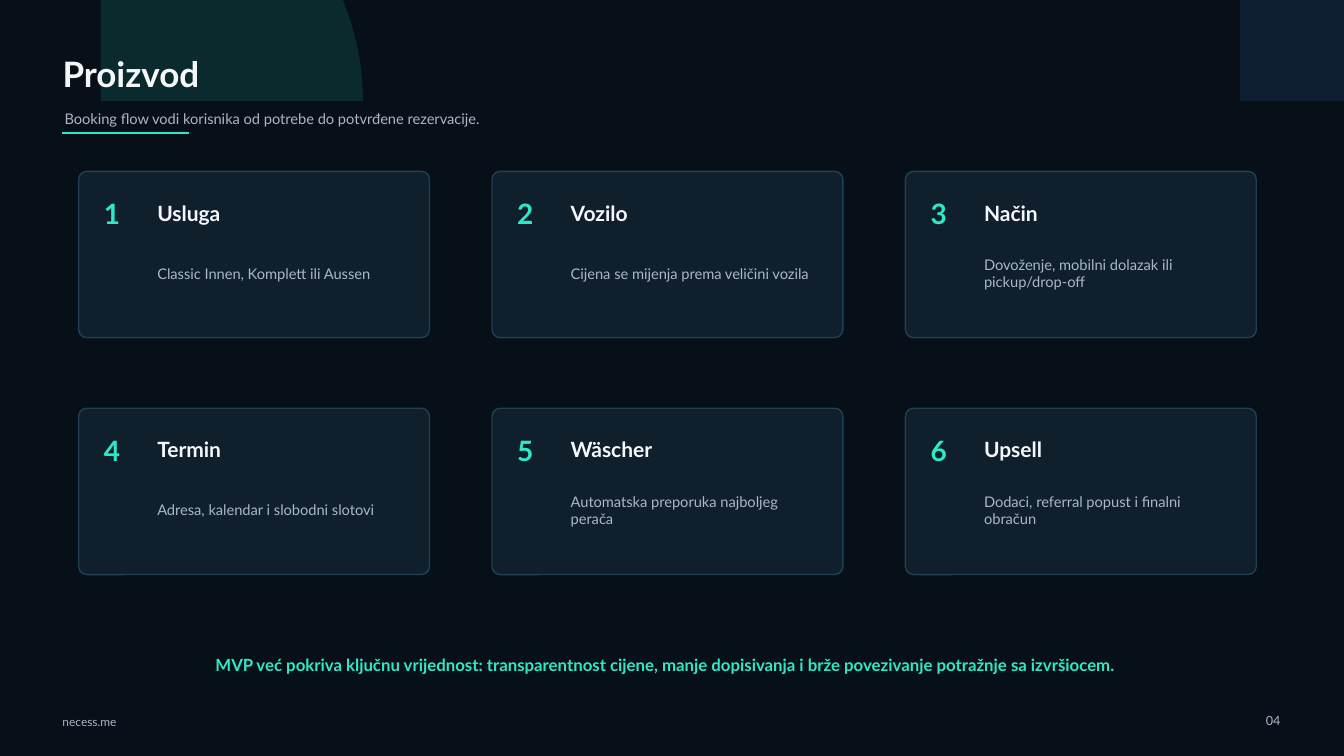
from dataclasses import dataclass

from lxml import etree
from pptx import Presentation
from pptx.dml.color import RGBColor
from pptx.enum import shapes, text
from pptx.oxml.ns import qn
from pptx.util import Inches, Pt

TITLE = "Proizvod"
LEAD = "Booking flow vodi korisnika od potrebe do potvrđene rezervacije."
STEPS = [
    ("Usluga", "Classic Innen, Komplett ili Aussen"),
    ("Vozilo", "Cijena se mijenja prema veličini vozila"),
    ("Način", "Dovoženje, mobilni dolazak ili pickup/drop-off"),
    ("Termin", "Adresa, kalendar i slobodni slotovi"),
    ("Wäscher", "Automatska preporuka najboljeg perača"),
    ("Upsell", "Dodaci, referral popust i finalni obračun"),
]
CLAIM = ("MVP već pokriva ključnu vrijednost: transparentnost cijene, "
         "manje dopisivanja i brže povezivanje potražnje sa izvršiocem.")
SITE = "necess.me"
PAGE = "04"


@dataclass(frozen=True)
class Theme:
    font: str = "Lato"
    back: str = "071018"
    card: str = "0F1F2C"
    edge: str = "25475C"
    mint: str = "2EE8C8"
    blue: str = "3B82F6"
    white: str = "F5F7FA"
    grey: str = "A9B7C6"
    title: float = 25
    digit: float = 20
    head: float = 15
    claim: float = 12
    body: float = 10.5
    page: float = 9
    site: float = 8.5


T = Theme()
ALIGN = text.PP_ALIGN
KIND = shapes.MSO_SHAPE

# Card grid: first corner, column and row pitch, card size
LEFT, TOP = 0.78, 1.7
STEP_X, STEP_Y = 4.1, 2.35
WIDE, HIGH = 3.48, 1.65
COLS = 3


def color(code):
    return RGBColor.from_string(code)


def fade(fill, percent):
    """Set the opacity of a solid fill element's colour."""
    alpha = etree.SubElement(fill[0], qn("a:alpha"))
    alpha.set("val", str(percent * 1000))


def write(box, words, size, tint, bold=False, align=ALIGN.LEFT):
    """Put one formatted run in a box without margins."""
    frame = box.text_frame
    frame.word_wrap = True
    frame.auto_size = text.MSO_AUTO_SIZE.NONE
    frame.vertical_anchor = text.MSO_ANCHOR.MIDDLE
    frame.margin_left = frame.margin_right = 0
    frame.margin_top = frame.margin_bottom = 0
    para = frame.paragraphs[0]
    para.alignment = align
    run = para.add_run()
    run.text = words
    run.font.name = T.font
    run.font.size = Pt(size)
    run.font.bold = bold
    run.font.color.rgb = color(tint)


def label(slide, place, *args, **style):
    box = slide.shapes.add_textbox(*map(Inches, place))
    write(box, *args, **style)


def shape(slide, kind, place, tint):
    item = slide.shapes.add_shape(kind, *map(Inches, place))
    item.shadow.inherit = False
    item.fill.solid()
    item.fill.fore_color.rgb = color(tint)
    return item


def glow(slide, x, y, size, tint):
    arc = shape(slide, KIND.ARC, (x, y, size, size), tint)
    arc.line.fill.background()
    fade(arc._element.spPr.find(qn("a:solidFill")), 12)


def header(slide):
    title = slide.shapes.title
    title.left, title.top = Inches(0.62), Inches(0.45)
    title.width, title.height = Inches(8.4), Inches(0.55)
    write(title, TITLE, T.title, T.white, bold=True)
    slide.shapes._spTree.append(title._element)  # in front of the glows
    label(slide, (0.64, 1, 8.6, 0.36), LEAD, T.body, T.grey)
    y = Inches(1.32)
    rule = slide.shapes.add_connector(
        shapes.MSO_CONNECTOR.STRAIGHT, Inches(0.62), y, Inches(1.87), y)
    rule.line.color.rgb = color(T.mint)
    rule.line.width = Pt(2)
    etree.SubElement(rule._element.spPr, qn("a:effectLst"))


def card(slide, index, head, body):
    row, col = divmod(index, COLS)
    x, y = LEFT + col * STEP_X, TOP + row * STEP_Y
    panel = shape(slide, KIND.ROUNDED_RECTANGLE, (x, y, WIDE, HIGH), T.card)
    panel.adjustments[0] = 0.048
    panel.line.color.rgb = color(T.edge)
    panel.line.width = Pt(1)
    fade(panel._element.spPr.find(qn("a:ln")).find(qn("a:solidFill")), 85)
    label(slide, (x + 0.25, y + 0.24, 0.38, 0.36), str(index + 1),
          T.digit, T.mint, bold=True)
    label(slide, (x + 0.78, y + 0.27, 2.45, 0.28), head,
          T.head, T.white, bold=True)
    label(slide, (x + 0.78, y + 0.72, 2.38, 0.58), body, T.body, T.grey)


def main():
    deck = Presentation()
    deck.slide_width, deck.slide_height = Inches(13.33), Inches(7.5)
    slide = deck.slides.add_slide(deck.slide_layouts.get_by_name("Title Only"))
    slide.background.fill.solid()
    slide.background.fill.fore_color.rgb = color(T.back)

    glow(slide, -1.6, -1.6, 5.2, T.mint)
    glow(slide, 9.5, -1.8, 5.6, T.blue)
    header(slide)
    for index, (head, body) in enumerate(STEPS):
        card(slide, index, head, body)
    label(slide, (1, 6.42, 11.2, 0.35), CLAIM, T.claim, T.mint,
          bold=True, align=ALIGN.CENTER)
    label(slide, (0.62, 7.05, 1.4, 0.22), SITE, T.site, T.grey)
    label(slide, (12.25, 7.02, 0.45, 0.25), PAGE, T.page, T.grey,
          align=ALIGN.RIGHT)
    deck.save("out.pptx")


if __name__ == "__main__":
    main()
